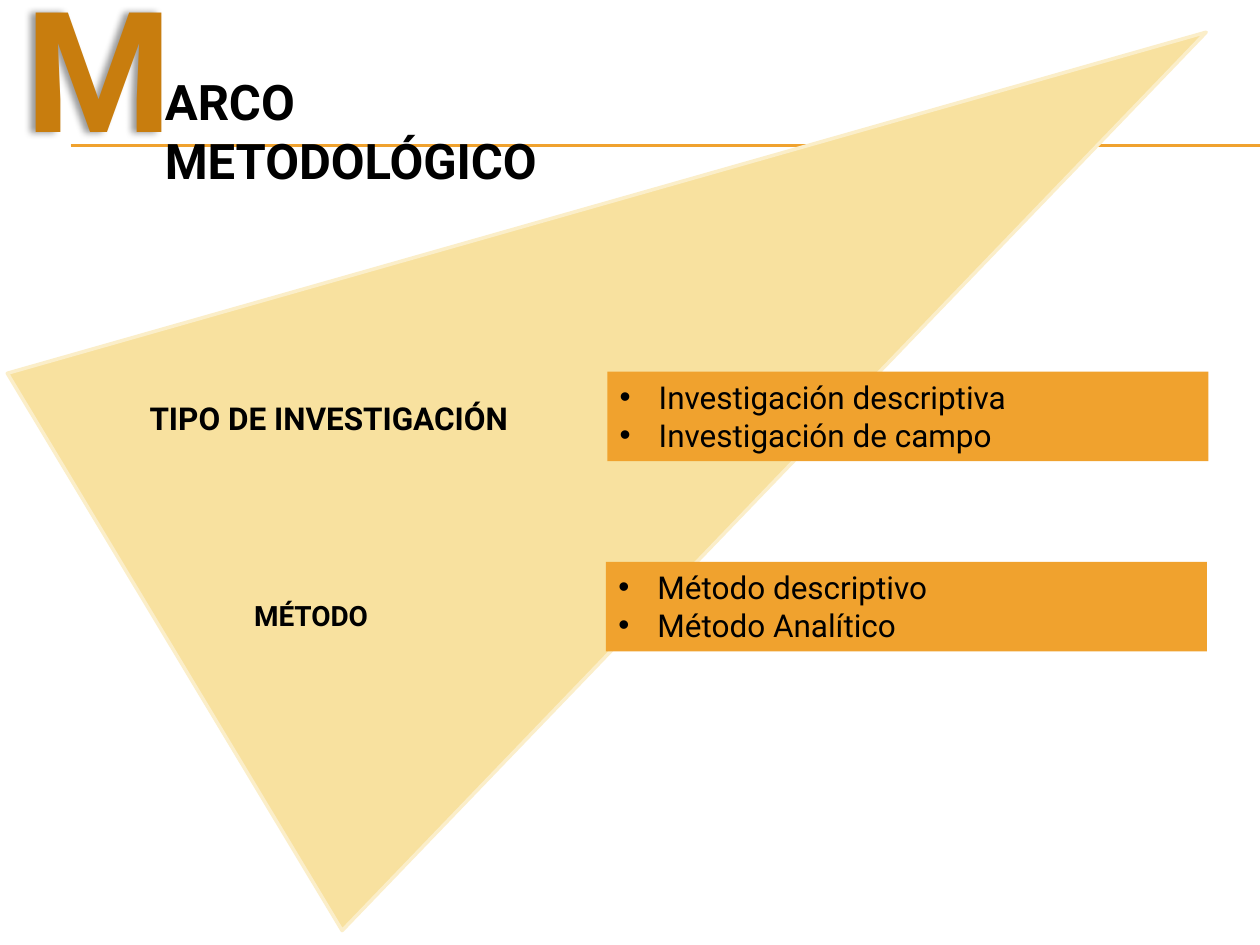
from lxml import etree
from pptx import Presentation
from pptx.dml.color import RGBColor
from pptx.enum.shapes import MSO_CONNECTOR, MSO_SHAPE
from pptx.enum.text import MSO_ANCHOR, MSO_AUTO_SIZE, PP_ALIGN
from pptx.oxml.ns import qn
from pptx.util import Inches, Pt

LINE = MSO_CONNECTOR.STRAIGHT
RECT, WEDGE = MSO_SHAPE.RECTANGLE, MSO_SHAPE.ISOSCELES_TRIANGLE
TOP, GROW = MSO_ANCHOR.TOP, MSO_AUTO_SIZE.SHAPE_TO_FIT_TEXT
LEFT, MID = PP_ALIGN.LEFT, PP_ALIGN.CENTER

BLACK = RGBColor(0x00, 0x00, 0x00)
AMBER = RGBColor(0xF0, 0xA2, 0x2E)
BROWN = RGBColor(0xC8, 0x7D, 0x0E)
SAND = RGBColor(0xF8, 0xE1, 0x9F)
CREAM = RGBColor(0xFB, 0xEE, 0xC9)

# Content: place, text, wrap, alignment, font
HEADS = [
    ((0.1, -0.33, 1.29, 1.72), "M", False, LEFT,
     dict(size=Pt(96), bold=True, color=BROWN)),
    ((1.21, 0.52, 3.95, 0.57), "ARCO METODOLÓGICO", True, LEFT,
     dict(size=Pt(28), bold=True, color=BLACK)),
]
LABELS = [
    ((0.17, 3.12, 4.88, 0.4), "TIPO DE INVESTIGACIÓN", True, MID,
     dict(size=Pt(18), bold=True, color=BLACK)),
    ((0.34, 4.7, 4.26, 0.37), "MÉTODO", True, MID,
     dict(size=Pt(16), bold=True, color=BLACK)),
]
BOXES = [
    ((4.82, 2.95), ["Investigación descriptiva", "Investigación de campo"]),
    ((4.81, 4.46), ["Método descriptivo", "Método Analítico"]),
]
BOX_SIZE = (4.77, 0.71)
BOX_FONT = dict(size=Pt(18), bold=False, color=BLACK)
RULES = [1.15, 1.16]
INDENT = Inches(0.31)

deck = Presentation()
deck.slide_width, deck.slide_height = Inches(10), Inches(7.5)
slide = deck.slides.add_slide(deck.slide_layouts[6])
shapes = slide.shapes


def inches(place):
    return [Inches(n) for n in place]


def write(shape, lines, align, font, wrap=True):
    frame = shape.text_frame
    for name, value in dict(word_wrap=wrap, auto_size=GROW,
                            vertical_anchor=TOP).items():
        setattr(frame, name, value)
    frame.text = "\n".join(lines)
    for para in frame.paragraphs:
        para.alignment = align
        style = para.runs[0].font
        style.name = "Roboto"
        for name, value in font.items():
            if name == "color":
                style.color.rgb = value
            else:
                setattr(style, name, value)


def add_text(place, text, wrap, align, font):
    box = shapes.add_textbox(*inches(place))
    write(box, [text], align, font, wrap)
    return box


def add_shape(kind, place, fill):
    shape = shapes.add_shape(kind, *inches(place))
    shape.shadow.inherit = False
    shape.fill.solid()
    shape.fill.fore_color.rgb = fill
    return shape


# Double rule under the title
for y in RULES:
    rule = shapes.add_connector(LINE, *inches((0.56, y, 10, y)))
    rule.line.color.rgb = AMBER
    rule.line.width = Pt(0.75)
    etree.SubElement(rule._element.spPr, qn("a:effectLst"))

# Title, with a soft shadow on its big initial
initial, title = [add_text(*head) for head in HEADS]
effects = etree.SubElement(initial._element.spPr, qn("a:effectLst"))
shadow = etree.SubElement(effects, qn("a:outerShdw"), blurRad="50800",
                          dist="38100", dir="10800000", algn="r")
tint = etree.SubElement(shadow, qn("a:srgbClr"), val="000000")
etree.SubElement(tint, qn("a:alpha"), val="40000")

# Tilted triangle
wedge = add_shape(WEDGE, (2.9, -2.06, 5.16, 9.55), SAND)
wedge.rotation = 59
wedge.line.color.rgb = CREAM
wedge.line.width = Pt(2)

# Labels and their bulleted boxes
for label, (spot, items) in zip(LABELS, BOXES):
    add_text(*label)
    box = add_shape(RECT, spot + BOX_SIZE, AMBER)
    box.line.fill.background()
    write(box, items, LEFT, BOX_FONT)
    for para in box.text_frame.paragraphs:
        props = para._p.get_or_add_pPr()
        props.set("marL", str(INDENT))
        props.set("indent", str(-INDENT))
        etree.SubElement(props, qn("a:buFont"), typeface="Arial")
        etree.SubElement(props, qn("a:buChar"), char="•")

deck.save("out.pptx")
